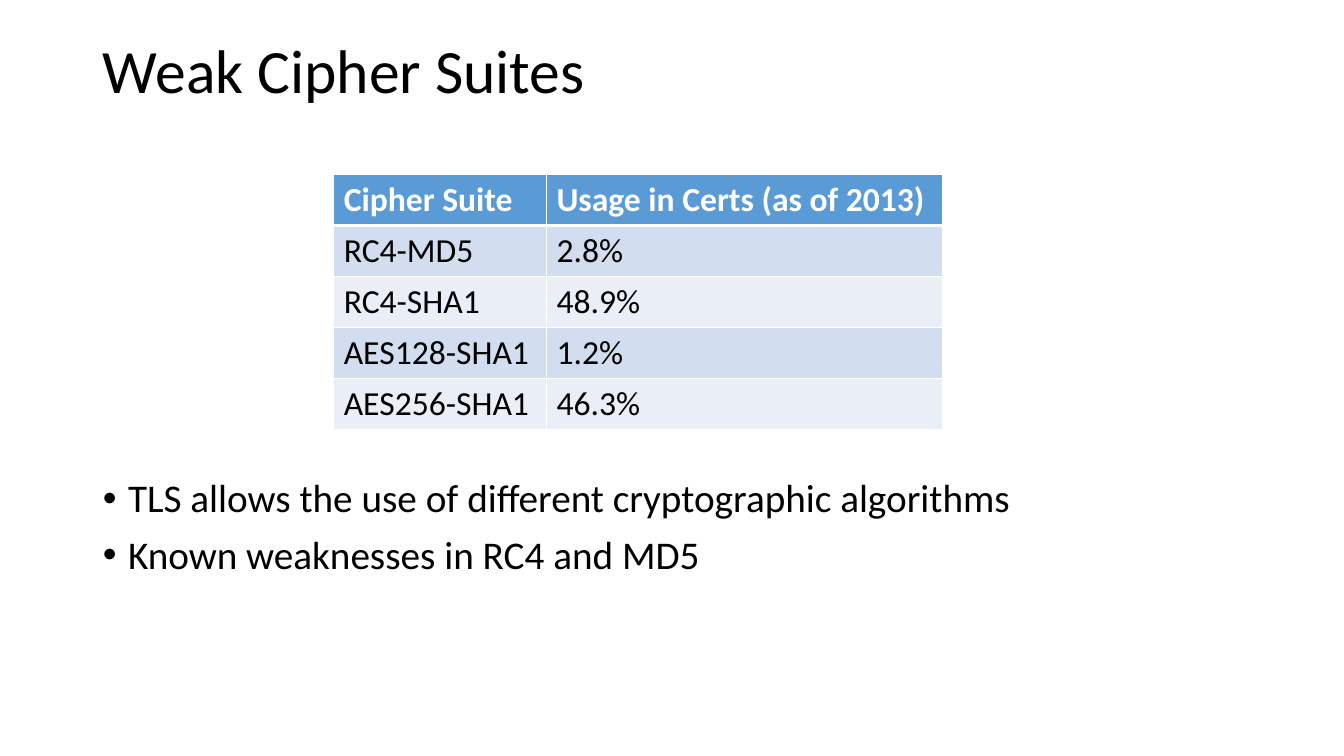
from lxml.etree import SubElement
from pptx import Presentation
from pptx.dml.color import RGBColor
from pptx.enum.text import MSO_ANCHOR, PP_ALIGN
from pptx.oxml.ns import qn
from pptx.util import Inches, Pt

COLORS = {
    "text": "000000",
    "header_text": "FFFFFF",
    "border": "FFFFFF",
    "header": "5B9BD5",
    "odd_row": "D2DEEF",
    "even_row": "EAEFF7",
}


def place(shape, left, top, width, height):
    box = {"left": left, "top": top, "width": width, "height": height}
    for name, value in box.items():
        setattr(shape, name, Inches(value))


def format_font(font, size, color, bold=False):
    values = {"name": "Calibri", "size": Pt(size), "bold": bold}
    for name, value in values.items():
        setattr(font, name, value)
    font.color.rgb = RGBColor.from_string(COLORS[color])


presentation = Presentation()
presentation.slide_width = Inches(13.33)
presentation.slide_height = Inches(7.5)
slide = presentation.slides.add_slide(presentation.slide_layouts[1])

# Title
title = slide.shapes.title
place(title, 0.92, 0, 11.5, 1.45)
title.text_frame.text = "Weak Cipher Suites"
title.text_frame.vertical_anchor = MSO_ANCHOR.MIDDLE
paragraph = title.text_frame.paragraphs[0]
paragraph.alignment = PP_ALIGN.LEFT
paragraph.line_spacing = 0.9
format_font(paragraph.runs[0].font, 44, "text")

# Bullet list
body = slide.placeholders[1]
place(body, 0.92, 4.7, 11.5, 2.69)
body.text_frame.text = "\n".join([
    "TLS allows the use of different cryptographic algorithms",
    "Known weaknesses in RC4 and MD5",
])
for paragraph in body.text_frame.paragraphs:
    paragraph.line_spacing = 0.9
    paragraph.space_before = Pt(10)
    properties = paragraph._p.get_or_add_pPr()
    properties.set("marL", str(Inches(0.25)))
    properties.set("indent", str(Inches(-0.25)))
    format_font(paragraph.runs[0].font, 28, "text")

# Cipher suite table
cipher_rows = [
    ("Cipher Suite", "Usage in Certs (as of 2013)"),
    ("RC4-MD5", "2.8%"),
    ("RC4-SHA1", "48.9%"),
    ("AES128-SHA1", "1.2%"),
    ("AES256-SHA1", "46.3%"),
]
table = slide.shapes.add_table(
    len(cipher_rows), 2, Inches(3.31), Inches(1.73), Inches(6.04), Inches(2.5)
).table
for column, width in zip(table.columns, (2.11, 3.93)):
    column.width = Inches(width)

for row_index, texts in enumerate(cipher_rows):
    is_header = row_index == 0
    fill_color = "header" if is_header else ("even_row", "odd_row")[row_index % 2]
    text_color = "header_text" if is_header else "text"
    # The line under the header is thicker
    border_widths = {
        "a:lnL": 1,
        "a:lnR": 1,
        "a:lnT": 3 if row_index == 1 else 1,
        "a:lnB": 3 if is_header else 1,
    }
    for column_index, text in enumerate(texts):
        cell = table.cell(row_index, column_index)
        cell.text = text
        format_font(cell.text_frame.paragraphs[0].runs[0].font, 24, text_color, is_header)
        cell_properties = cell._tc.get_or_add_tcPr()
        for tag, width in border_widths.items():
            line = SubElement(cell_properties, qn(tag), w=str(Pt(width)))
            line_fill = SubElement(line, qn("a:solidFill"))
            SubElement(line_fill, qn("a:srgbClr"), val=COLORS["border"])
        cell.fill.solid()
        cell.fill.fore_color.rgb = RGBColor.from_string(COLORS[fill_color])

presentation.save("out.pptx")
